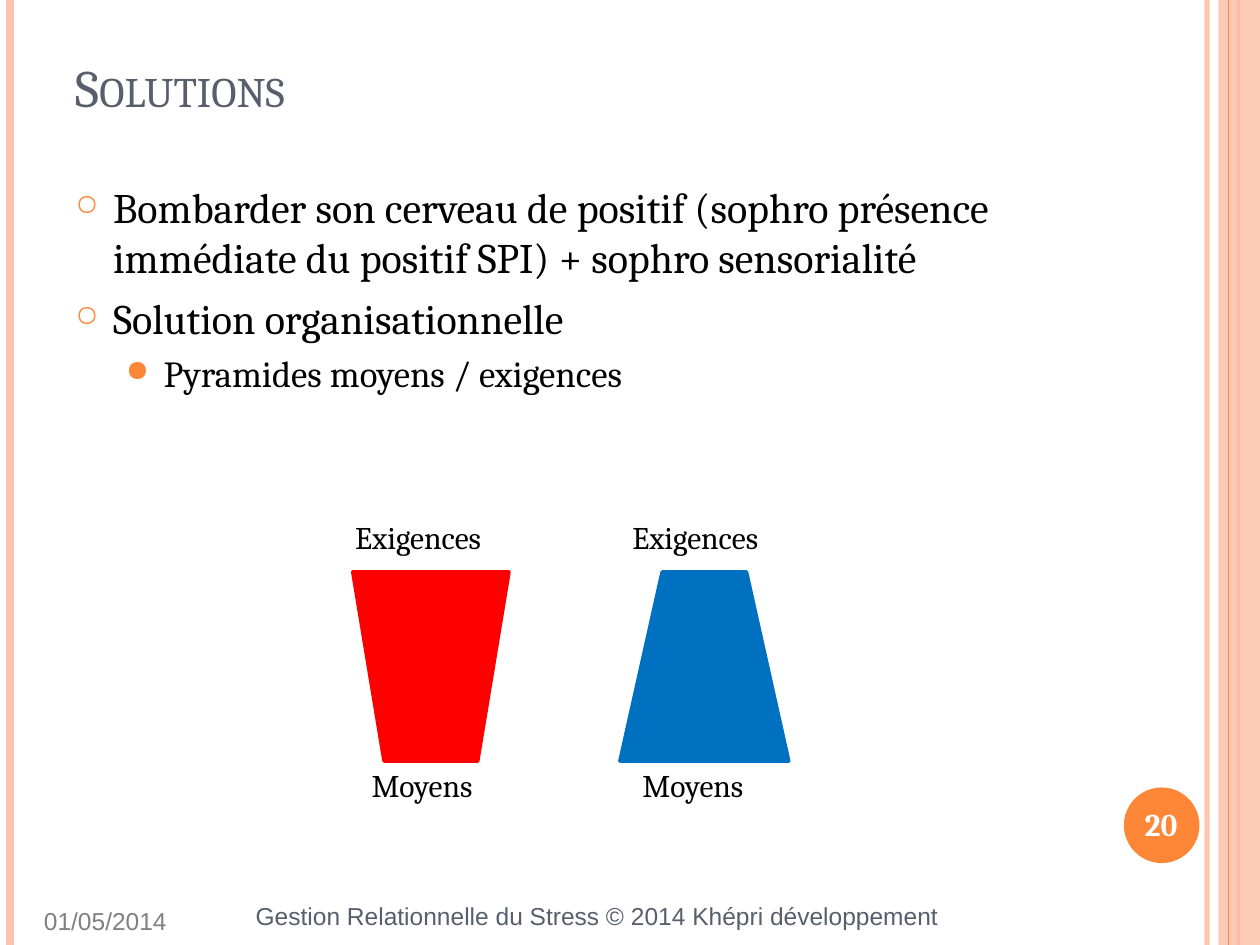
from lxml import etree
from pptx import Presentation
from pptx.dml.color import RGBColor
from pptx.enum.shapes import MSO_CONNECTOR, MSO_SHAPE
from pptx.enum.text import MSO_ANCHOR, MSO_AUTO_SIZE, PP_ALIGN
from pptx.oxml.ns import qn
from pptx.util import Emu, Pt

PX = 9144  # 100 px to the inch
WIDTH, HEIGHT = 1000, 750
STRAIGHT = MSO_CONNECTOR.STRAIGHT
RECTANGLE, OVAL = MSO_SHAPE.RECTANGLE, MSO_SHAPE.OVAL
FUNNEL, TRAPEZOID = MSO_SHAPE.FLOWCHART_MANUAL_OPERATION, MSO_SHAPE.TRAPEZOID
LEFT, CENTER, RIGHT = PP_ALIGN.LEFT, PP_ALIGN.CENTER, PP_ALIGN.RIGHT
BOTTOM = MSO_ANCHOR.BOTTOM
FIT_SHAPE, NO_FIT = MSO_AUTO_SIZE.SHAPE_TO_FIT_TEXT, MSO_AUTO_SIZE.NONE

ORANGE, PEACH, SLATE = "FE8637", "FEC3AE", "575F6D"
BLACK, GREY, WHITE, RED, BLUE = "000000", "808080", "FFFFFF", "FF0000", "0070C0"


def px(*lengths):
    return [Emu(length * PX) for length in lengths]


def color(hex_code):
    return RGBColor.from_string(hex_code)


def set_format(target, **values):
    for name, value in values.items():
        setattr(target, name, value)


def set_alpha(properties, percent):
    """Make the first colour found in the shape properties partly transparent."""
    tint = next(properties.iter(qn("a:srgbClr")))
    etree.SubElement(tint, qn("a:alpha"), val=str(percent * 1000))


class SlidePainter:
    def __init__(self, page, body_font="Cambria", small_font="Arial"):
        self.page = page
        self.body_font = body_font
        self.small_font = small_font

    def style_span(self, para, text, size, ink, font=None, bold=False):
        span = para.add_run()
        span.text = text
        set_format(span.font, name=font or self.body_font, size=Pt(size), bold=bold)
        span.font.color.rgb = color(ink)
        return span

    def title(self, text, left, top, width, height):
        box = self.page.shapes.title
        box.left, box.top, box.width, box.height = px(left, top, width, height)
        set_format(box.text_frame, vertical_anchor=BOTTOM, word_wrap=True, auto_size=NO_FIT)
        para = box.text_frame.paragraphs[0]
        para.alignment = LEFT
        span = self.style_span(para, text, 30, SLATE)
        span.font._element.set("cap", "small")

    def text(self, text, left, top, width, height, size=18, ink=BLACK,
             font=None, bold=False, align=LEFT, wrap=True, fit=NO_FIT):
        box = self.page.shapes.add_textbox(*px(left, top, width, height))
        set_format(box.text_frame, word_wrap=wrap, auto_size=fit)
        para = box.text_frame.paragraphs[0]
        para.alignment = align
        self.style_span(para, text, size, ink, font, bold)

    def footer(self, text, left, top, width, height, ink, align=LEFT):
        self.text(text, left, top, width, height, 14, ink, self.small_font, align=align)

    def label(self, text, left, top, width):
        self.text(text, left, top, width, 40, wrap=False, fit=FIT_SHAPE)

    def bullets(self, items, left, top, width, height):
        """Each item is (text, level); the level sets size, sign and indent."""
        levels = [
            {"size": 24, "sign": "○", "percent": 70, "margin": 30, "before": 6},
            {"size": 21, "sign": "●", "percent": 80, "margin": 70, "before": 4.2},
        ]
        box = self.page.shapes.add_textbox(*px(left, top, width, height))
        frame = box.text_frame
        frame.word_wrap = True
        for index, (text, level) in enumerate(items):
            look = levels[level]
            para = frame.add_paragraph() if index else frame.paragraphs[0]
            properties = para._p.get_or_add_pPr()
            properties.set("marL", str(look["margin"] * PX))
            properties.set("indent", str(-30 * PX))
            tint = etree.SubElement(properties, qn("a:buClr"))
            etree.SubElement(tint, qn("a:srgbClr"), val=ORANGE)
            etree.SubElement(properties, qn("a:buSzPct"), val=str(look["percent"] * 1000))
            etree.SubElement(properties, qn("a:buChar"), char=look["sign"])
            set_format(para, level=level, space_before=Pt(look["before"] if index else 0))
            self.style_span(para, text, look["size"], BLACK)

    def shape(self, kind, left, top, width, height, fill, outline=None, alpha=None):
        shape = self.page.shapes.add_shape(kind, *px(left, top, width, height))
        shape.shadow.inherit = False
        shape.fill.solid()
        shape.fill.fore_color.rgb = color(fill)
        if alpha:
            set_alpha(shape._element.spPr, alpha)
        if outline:
            shape.line.color.rgb = color(fill)
            shape.line.width = Pt(outline)
        else:
            shape.line.fill.background()

    def vertical_line(self, x, ink, weight, alpha=None):
        line = self.page.shapes.add_connector(STRAIGHT, *px(x, 0, x, HEIGHT))
        line.line.color.rgb = color(ink)
        line.line.width = Pt(weight)
        properties = line._element.spPr
        if alpha:
            set_alpha(properties, alpha)
        etree.SubElement(properties, qn("a:effectLst"))


def main():
    deck = Presentation()
    deck.slide_width, deck.slide_height = px(WIDTH, HEIGHT)
    painter = SlidePainter(deck.slides.add_slide(deck.slide_layouts[5]))

    painter.vertical_line(958, PEACH, 3, alpha=93)
    painter.vertical_line(8, PEACH, 4.5)
    painter.vertical_line(983, ORANGE, 1.5)
    painter.shape(RECTANGLE, 967, 0, 33, HEIGHT, PEACH, alpha=87)
    painter.vertical_line(975, ORANGE, 0.75)
    painter.shape(OVAL, 892, 625, 60, 60, ORANGE)

    painter.footer("01/05/2014", 25, 714, 152, 36, GREY)
    painter.footer("Gestion Relationnelle du Stress © 2014 Khépri développement",
                   177, 710, 578, 40, SLATE, RIGHT)
    painter.text("20", 886, 634, 71, 40, ink=WHITE, bold=True, align=CENTER)

    painter.title("Solutions", 50, 30, 817, 69)
    painter.bullets([
        ("Bombarder son cerveau de positif (sophro présence immédiate du positif SPI)"
         " + sophro sensorialité", 0),
        ("Solution organisationnelle", 0),
        ("Pyramides moyens / exigences", 1),
    ], 50, 139, 817, 569)

    pyramids = [
        (FUNNEL, 280, 124, RED, 272, 285),
        (TRAPEZOID, 492, 134, BLUE, 492, 500),
    ]
    for kind, left, width, fill, demand_left, means_left in pyramids:
        painter.shape(kind, left, 454, width, 150, fill, outline=2)
        painter.label("Exigences", demand_left, 406, 137)
        painter.label("Moyens", means_left, 603, 109)

    deck.save("out.pptx")


if __name__ == "__main__":
    main()
